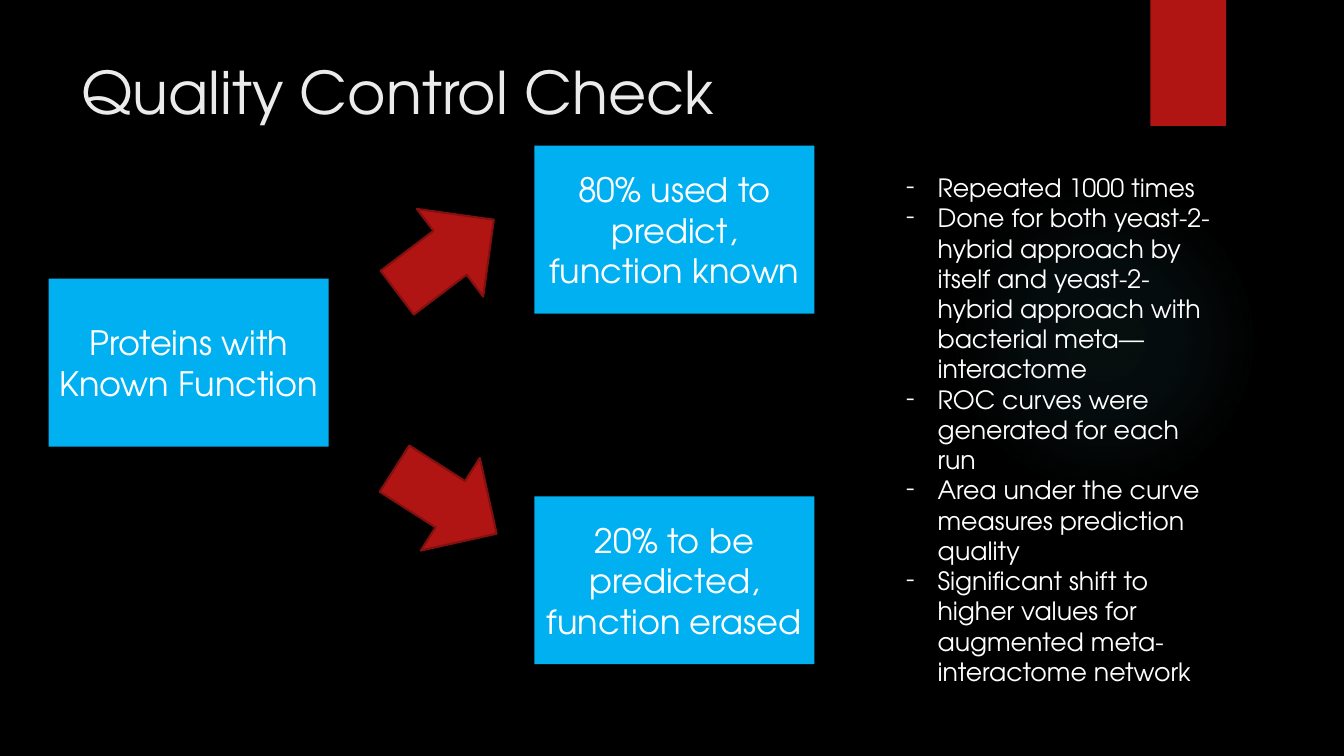
"""Build the Quality Control Check slide with its protein split diagram."""
from pptx import Presentation
from pptx.dml.color import RGBColor
from pptx.enum.shapes import MSO_SHAPE
from pptx.enum.text import MSO_ANCHOR, MSO_AUTO_SIZE, PP_ALIGN
from pptx.oxml import parse_xml
from pptx.oxml.ns import nsdecls, qn
from pptx.util import Pt

BLACK = RGBColor(0x00, 0x00, 0x00)
WHITE = RGBColor(0xFF, 0xFF, 0xFF)
OFF_WHITE = RGBColor(0xEB, 0xEB, 0xEB)
RED = RGBColor(0xB0, 0x15, 0x13)
DARK_RED = RGBColor(0x82, 0x10, 0x0E)
CYAN = RGBColor(0x00, 0xB0, 0xF0)
TEAL = RGBColor(0x50, 0xB9, 0xC1)
FONT = "TeX Gyre Adventor"


def add_block(kind, left, top, width, height, color):
    shape = slide.shapes.add_shape(kind, Pt(left), Pt(top), Pt(width), Pt(height))
    shape.shadow.inherit = False
    shape.line.fill.background()
    if color is not None:
        shape.fill.solid()
        shape.fill.fore_color.rgb = color
    return shape


def style_text(paragraph, size, color, alignment):
    paragraph.alignment = alignment
    paragraph.space_before = Pt(0)
    for run in paragraph.runs:
        run.font.name = FONT
        run.font.size = Pt(size)
        run.font.color.rgb = color


presentation = Presentation()
presentation.slide_width = Pt(960)
presentation.slide_height = Pt(540)
slide = presentation.slides.add_slide(presentation.slide_layouts[1])
slide.background.fill.solid()
slide.background.fill.fore_color.rgb = BLACK

title = slide.shapes.title
title.left, title.top, title.width, title.height = Pt(51), Pt(36), Pt(741), Pt(110)
title.text_frame.text = "Quality Control Check"
title.text_frame.vertical_anchor = MSO_ANCHOR.TOP
title.text_frame.auto_size = MSO_AUTO_SIZE.NONE
style_text(title.text_frame.paragraphs[0], 42, OFF_WHITE, PP_ALIGN.LEFT)

glow = add_block(MSO_SHAPE.OVAL, 677.5, 131.75, 221.75, 221.75, None)
stops = "".join(
    f'<a:gs pos="{position * 1000}"><a:srgbClr val="{TEAL}">'
    f'<a:alpha val="{opacity * 1000}"/></a:srgbClr></a:gs>'
    for position, opacity in [(0, 7), (36, 6), (69, 0), (100, 0)]
)
gradient = parse_xml(
    f'<a:gradFill {nsdecls("a")}><a:gsLst>{stops}</a:gsLst><a:path path="circle">'
    '<a:fillToRect l="50000" t="50000" r="50000" b="50000"/></a:path></a:gradFill>'
)
glow._element.spPr.find(qn("a:prstGeom")).addnext(gradient)
title._element.addprevious(glow._element)

add_block(MSO_SHAPE.RECTANGLE, 821.75, 0, 54, 90, RED)

for left, top, label in [
    (34.75, 199, "Proteins with Known Function"),
    (381.75, 104, "80% used to predict, function known"),
    (381.75, 354.5, "20% to be predicted, function erased"),
]:
    box = add_block(MSO_SHAPE.RECTANGLE, left, top, 200, 120, CYAN)
    box.text_frame.word_wrap = True
    box.text_frame.vertical_anchor = MSO_ANCHOR.MIDDLE
    box.text_frame.text = label
    style_text(box.text_frame.paragraphs[0], 24, WHITE, PP_ALIGN.CENTER)

for top, rotation in [(139.75, 52.9), (314.75, 122.5)]:
    arrow = add_block(MSO_SHAPE.UP_ARROW, 279, top, 78.5, 86.5, RED)
    arrow.rotation = rotation
    arrow.line.color.rgb = DARK_RED
    arrow.line.width = Pt(1.5)

findings = slide.placeholders[1]
findings.left, findings.top, findings.width, findings.height = Pt(640), Pt(119.5), Pt(234.75), Pt(399.5)
findings.text_frame.text = "\n".join([
    "Repeated 1000 times",
    "Done for both yeast-2-hybrid approach by itself and yeast-2-hybrid approach with bacterial meta—interactome",
    "ROC curves were generated for each run",
    "Area under the curve measures prediction quality",
    "Significant shift to higher values for augmented meta-interactome network",
])
findings.text_frame.vertical_anchor = MSO_ANCHOR.TOP
findings.text_frame.auto_size = MSO_AUTO_SIZE.NONE
for paragraph in findings.text_frame.paragraphs:
    properties = paragraph._element.get_or_add_pPr()
    properties.set("marL", str(Pt(22.5)))
    properties.set("indent", str(-Pt(22.5)))
    properties.append(parse_xml(f'<a:buFont {nsdecls("a")} typeface="{FONT}"/>'))
    properties.append(parse_xml(f'<a:buChar {nsdecls("a")} char="-"/>'))
    style_text(paragraph, 18, WHITE, PP_ALIGN.LEFT)

presentation.save("out.pptx")
